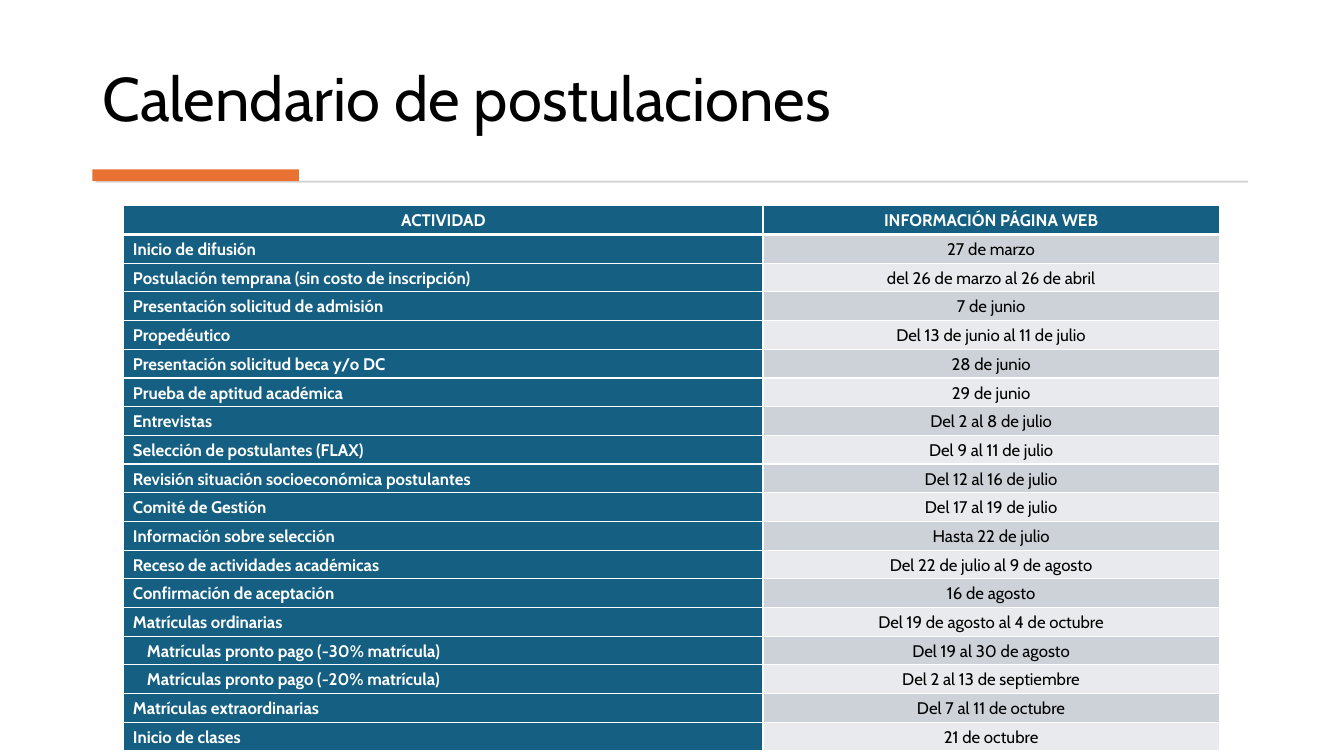
from dataclasses import dataclass

from lxml import etree
from pptx import Presentation
from pptx.dml.color import RGBColor
from pptx.enum.shapes import MSO_SHAPE
from pptx.enum.text import MSO_ANCHOR, PP_ALIGN
from pptx.oxml.ns import qn
from pptx.util import Pt

RECTANGLE = MSO_SHAPE.RECTANGLE
BOTTOM, MIDDLE = MSO_ANCHOR.BOTTOM, MSO_ANCHOR.MIDDLE
LEFT, CENTER = PP_ALIGN.LEFT, PP_ALIGN.CENTER
EMU_PER_PX = 6350

HEADINGS = ("ACTIVIDAD", "INFORMACIÓN PÁGINA WEB")
CALENDAR = [
    ("Inicio de difusión", "27 de marzo"),
    ("Postulación temprana (sin costo de inscripción)", "del 26 de marzo al 26 de abril"),
    ("Presentación solicitud de admisión", "7 de junio"),
    ("Propedéutico", "Del 13 de junio al 11 de julio"),
    ("Presentación solicitud beca y/o DC", "28 de junio"),
    ("Prueba de aptitud académica", "29 de junio"),
    ("Entrevistas", "Del 2 al 8 de julio"),
    ("Selección de postulantes (FLAX)", "Del 9 al 11 de julio"),
    ("Revisión situación socioeconómica postulantes", "Del 12 al 16 de julio"),
    ("Comité de Gestión", "Del 17 al 19 de julio"),
    ("Información sobre selección", "Hasta 22 de julio"),
    ("Receso de actividades académicas", "Del 22 de julio al 9 de agosto"),
    ("Confirmación de aceptación", "16 de agosto"),
    ("Matrículas ordinarias", "Del 19 de agosto al 4 de octubre"),
    ("Matrículas pronto pago (-30% matrícula)", "Del 19 al 30 de agosto"),
    ("Matrículas pronto pago (-20% matrícula)", "Del 2 al 13 de septiembre"),
    ("Matrículas extraordinarias", "Del 7 al 11 de octubre"),
    ("Inicio de clases", "21 de octubre"),
]
SUBITEM_PREFIX = "Matrículas pronto pago"


@dataclass(frozen=True)
class Theme:
    font: str = "Cabin"
    title_size: int = 44
    table_size: int = 12
    ink: str = "000000"
    paper: str = "FFFFFF"
    rule: str = "D5D5D5"
    accent: str = "E97132"
    header: str = "156082"
    bands: tuple = ("CCD2D8", "E8EAED")


def px(length):
    return length * EMU_PER_PX


class SlideBuilder:
    def __init__(self, slide, theme):
        self.slide = slide
        self.theme = theme

    def set_text(self, frame, text, size, color, bold=False, align=LEFT, spacing=1.0):
        frame.text = text
        paragraph = frame.paragraphs[0]
        paragraph.alignment = align
        paragraph.line_spacing = spacing
        font = paragraph.runs[0].font
        font.name = self.theme.font
        font.size = Pt(size)
        font.bold = bold
        font.color.rgb = RGBColor.from_string(color)
        return paragraph

    def title(self, text, left, top, width, height):
        box = self.slide.shapes.add_textbox(px(left), px(top), px(width), px(height))
        frame = box.text_frame
        frame.word_wrap = True
        frame.vertical_anchor = BOTTOM
        self.set_text(frame, text, self.theme.title_size, self.theme.ink, spacing=0.9)

    def bar(self, color, left, top, width, height):
        bar = self.slide.shapes.add_shape(RECTANGLE, px(left), px(top), px(width), px(height))
        bar.shadow.inherit = False
        bar.fill.solid()
        bar.fill.fore_color.rgb = RGBColor.from_string(color)
        bar.line.fill.background()

    def borders(self, cell, top, bottom):
        properties = cell._tc.get_or_add_tcPr()
        for side, points in (("L", 1), ("R", 1), ("T", top), ("B", bottom)):
            line = etree.SubElement(properties, qn(f"a:ln{side}"), w=str(Pt(points)))
            fill = etree.SubElement(line, qn("a:solidFill"))
            etree.SubElement(fill, qn("a:srgbClr"), val=self.theme.paper)

    def cell(self, cell, text, row, column):
        theme = self.theme
        dark = row == 0 or column == 0
        cell.vertical_anchor = MIDDLE
        cell.margin_left = cell.margin_right = px(13)
        cell.margin_top = cell.margin_bottom = 0
        self.borders(cell, top=3 if row == 1 else 1, bottom=3 if row == 0 else 1)
        cell.fill.solid()
        background = theme.header if dark else theme.bands[(row - 1) % 2]
        cell.fill.fore_color.rgb = RGBColor.from_string(background)
        paragraph = self.set_text(
            cell.text_frame, text, theme.table_size,
            theme.paper if dark else theme.ink, bold=dark,
            align=LEFT if row and column == 0 else CENTER, spacing=1.07,
        )
        paragraph.space_after = Pt(8)
        if text.startswith(SUBITEM_PREFIX):
            paragraph._p.get_or_add_pPr().set("marL", str(px(20)))

    def table(self, rows, left, top, widths, row_height):
        table = self.slide.shapes.add_table(
            len(rows), len(widths), px(left), px(top),
            px(sum(widths)), px(row_height * len(rows)),
        ).table
        for column, width in zip(table.columns, widths):
            column.width = px(width)
        for row, texts in enumerate(rows):
            table.rows[row].height = px(row_height)
            for column, text in enumerate(texts):
                self.cell(table.cell(row, column), text, row, column)


def main():
    presentation = Presentation()
    presentation.slide_width = px(1920)
    presentation.slide_height = px(1080)
    theme = Theme()
    builder = SlideBuilder(presentation.slides.add_slide(presentation.slide_layouts[6]), theme)
    builder.title("Calendario de postulaciones", 132, 40, 1655, 160)
    builder.bar(theme.rule, 137, 258, 1646, 3)
    builder.bar(theme.accent, 132, 242, 295, 17)
    builder.table([HEADINGS, *CALENDAR], 177, 294, (913, 652), 41)
    presentation.save("out.pptx")


if __name__ == "__main__":
    main()
